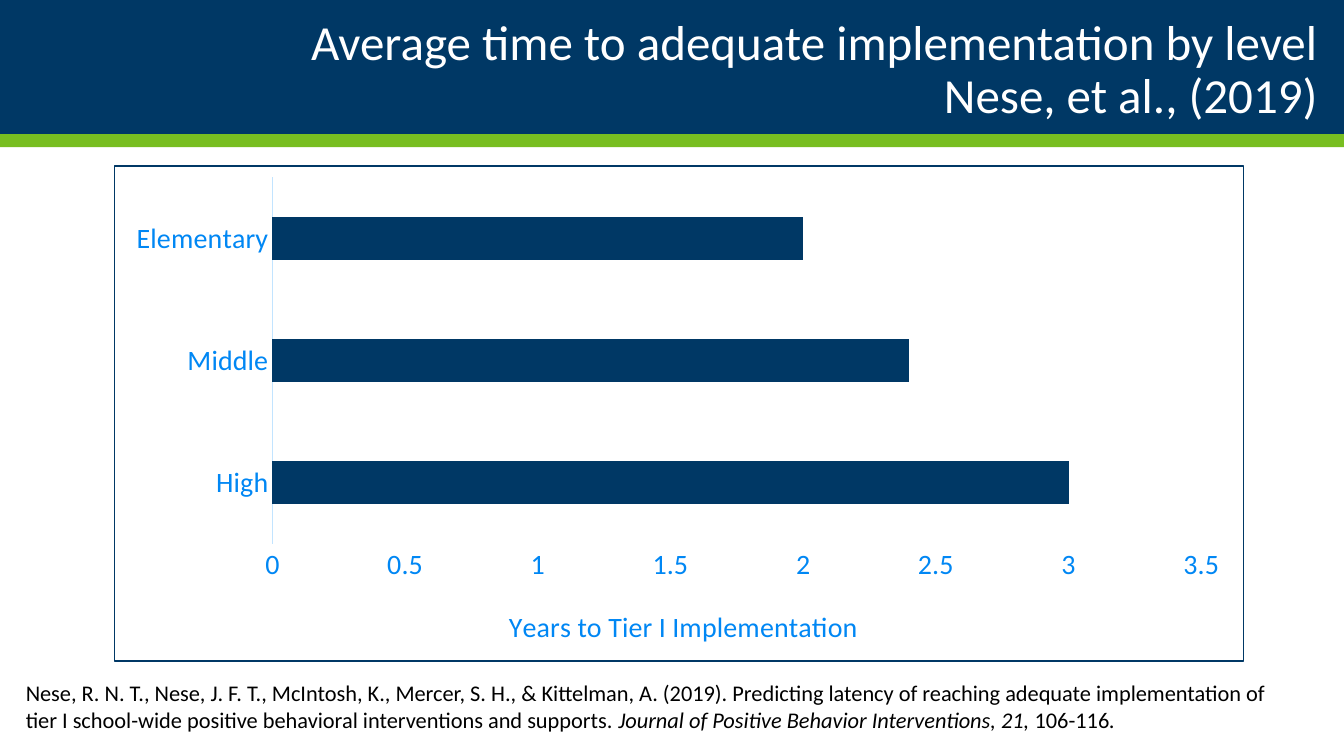
from lxml.etree import SubElement
from pptx import Presentation
from pptx.chart.data import CategoryChartData
from pptx.dml.color import RGBColor
from pptx.enum.chart import XL_CHART_TYPE, XL_TICK_MARK
from pptx.enum.shapes import MSO_SHAPE
from pptx.enum.text import MSO_ANCHOR, PP_ALIGN
from pptx.oxml import parse_xml
from pptx.oxml.ns import nsdecls, qn
from pptx.util import Cm, Pt

NAVY = RGBColor(0x00, 0x38, 0x65)
GREEN = RGBColor(0x78, 0xBE, 0x21)
BLUE = RGBColor(0x00, 0x87, 0xF4)
PALE_BLUE = RGBColor(0xC2, 0xE4, 0xFF)
WHITE = RGBColor(0xFF, 0xFF, 0xFF)
BLACK = RGBColor(0x00, 0x00, 0x00)
FONT = "Calibri"
SLIDE_WIDTH = Cm(33.87)


def style_font(font, size, color):
    font.name = FONT
    font.size = Pt(size)
    font.color.rgb = color


def add_band(page, top, height, color):
    band = page.shapes.add_shape(MSO_SHAPE.RECTANGLE, 0, top, SLIDE_WIDTH, height)
    band.shadow.inherit = False
    band.fill.solid()
    band.fill.fore_color.rgb = color
    band.line.fill.background()


def add_text(page, left, top, width, height, runs, size, color):
    box = page.shapes.add_textbox(left, top, width, height)
    box.text_frame.word_wrap = True
    para = box.text_frame.paragraphs[0]
    style_font(para.font, size, color)
    for text, italic in runs:
        span = para.add_run()
        span.text = text
        span.font.italic = italic
    return box.text_frame


def add_heading(page, lines):
    frame = add_text(page, Cm(6.65), Cm(0.43), Cm(26.82), Cm(2.74), [], 35, WHITE)
    frame.vertical_anchor = MSO_ANCHOR.MIDDLE
    para = frame.paragraphs[0]
    para.text = "\v".join(lines)
    para.alignment = PP_ALIGN.RIGHT
    para.line_spacing = 0.9


def place(element, index, **settings):
    for layout in element.findall(qn("c:layout")):
        element.remove(layout)
    layout = parse_xml(f"<c:layout {nsdecls('c')}><c:manualLayout/></c:layout>")
    for tag, value in settings.items():
        SubElement(layout[0], qn(f"c:{tag}")).set("val", str(value))
    element.insert(index, layout)


def frame_chart(chart):
    area = parse_xml(
        f"<c:spPr {nsdecls('c', 'a')}>"
        f'<a:solidFill><a:srgbClr val="{WHITE}"/></a:solidFill>'
        f'<a:ln w="{Pt(0.75)}"><a:solidFill><a:srgbClr val="{NAVY}"/></a:solidFill></a:ln>'
        "</c:spPr>"
    )
    chart.element.find(qn("c:chart")).addnext(area)


def style_axis(axis):
    axis.has_major_gridlines = False
    axis.major_tick_mark = XL_TICK_MARK.NONE
    axis.minor_tick_mark = XL_TICK_MARK.NONE
    style_font(axis.tick_labels.font, 20, BLUE)


def add_years_chart(page, years_by_level):
    data = CategoryChartData()
    data.categories = list(years_by_level)
    data.add_series("Series 1", list(years_by_level.values()))
    chart = page.shapes.add_chart(
        XL_CHART_TYPE.BAR_CLUSTERED, Cm(2.87), Cm(4.17), Cm(28.47), Cm(12.5), data
    ).chart
    chart.has_legend = False
    chart.has_title = False
    style_font(chart.font, 20, NAVY)
    frame_chart(chart)

    plot = chart.plots[0]
    plot.gap_width = 182
    plot.vary_by_categories = False
    fill = plot.series[0].format.fill
    fill.solid()
    fill.fore_color.rgb = NAVY

    levels, years = chart.category_axis, chart.value_axis
    style_axis(levels)
    levels.format.line.color.rgb = PALE_BLUE
    levels.format.line.width = Pt(0.75)
    style_axis(years)
    years.format.line.fill.background()
    years.minimum_scale, years.maximum_scale, years.major_unit = 0, 3.5, 0.5
    years.tick_labels.number_format = "General"
    years.tick_labels.number_format_is_linked = False

    title = years.axis_title
    para = title.text_frame.paragraphs[0]
    para.text = "Years to Tier I Implementation"
    style_font(para.font, 20, BLUE)
    para.font.bold = False

    place(title._element, 1, xMode="edge", yMode="edge", x=0.345, y=0.88)
    place(
        chart.element.find(".//" + qn("c:plotArea")), 0,
        layoutTarget="inner", xMode="edge", yMode="edge",
        x=0.14, y=0.023, w=0.823, h=0.74,
    )


def main():
    deck = Presentation()
    deck.slide_width = SLIDE_WIDTH
    deck.slide_height = Cm(19.05)
    page = deck.slides.add_slide(deck.slide_layouts[6])
    add_band(page, 0, Cm(3.38), NAVY)
    add_band(page, Cm(3.38), Cm(0.33), GREEN)
    add_heading(page, ["Average time to adequate implementation by level", "Nese, et al., (2019)"])
    add_years_chart(page, {"High": 3, "Middle": 2.4, "Elementary": 2})
    citation = [
        ("Nese, R. N. T., Nese, J. F. T., McIntosh, K., Mercer, S. H., & Kittelman, A. (2019). "
         "Predicting latency of reaching adequate implementation of tier I school-wide positive "
         "behavioral interventions and supports. ", False),
        ("Journal of Positive Behavior Interventions, 21, ", True),
        ("106-116", False),
        (".", True),
    ]
    add_text(page, Cm(0.4), Cm(17), Cm(31.78), Cm(1.63), citation, 16, BLACK)
    deck.save("out.pptx")


if __name__ == "__main__":
    main()
